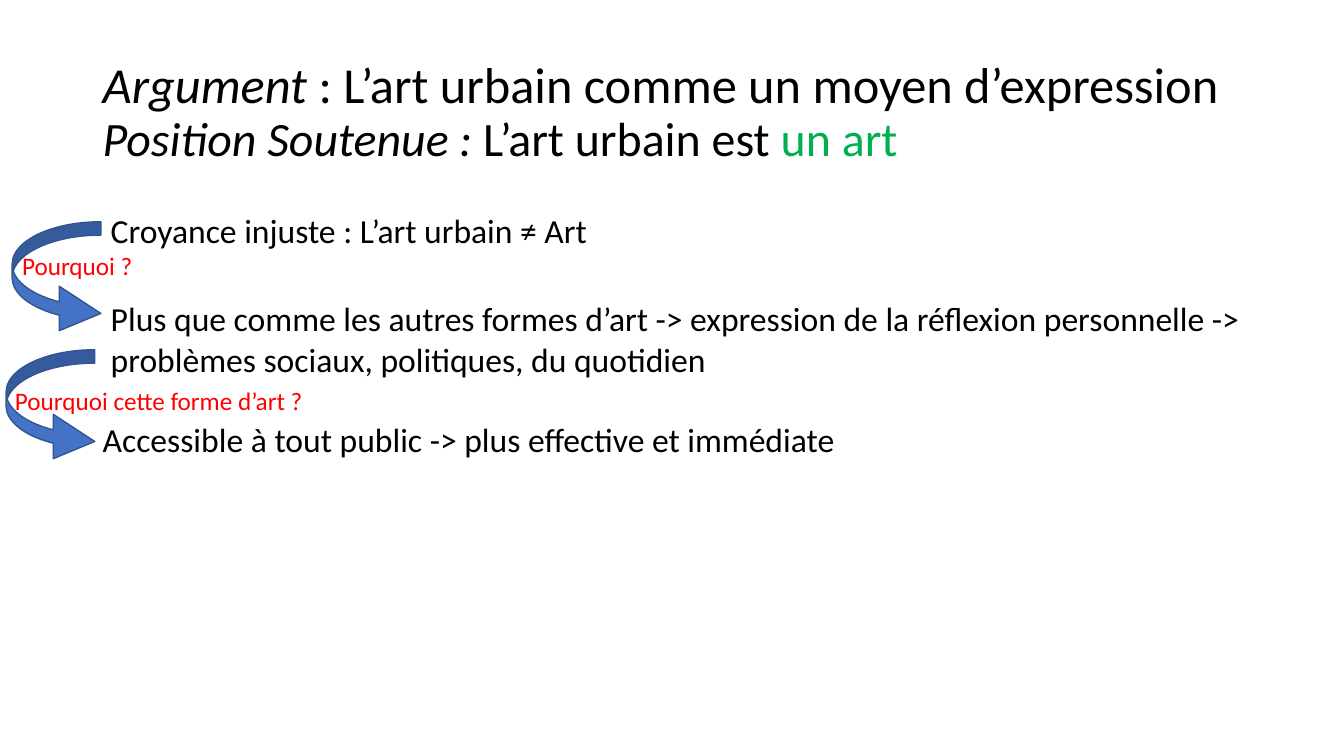
from dataclasses import dataclass

from pptx import Presentation
from pptx.dml.color import RGBColor
from pptx.enum.shapes import MSO_SHAPE
from pptx.enum.text import MSO_ANCHOR, MSO_AUTO_SIZE
from pptx.shapes.shapetree import GroupShapes, SlideShapes
from pptx.slide import Slide
from pptx.text.text import TextFrame
from pptx.util import Inches, Pt

FONT_NAME = "Calibri"
BLACK = RGBColor(0x00, 0x00, 0x00)
RED = RGBColor(0xFF, 0x00, 0x00)
GREEN = RGBColor(0x00, 0xB0, 0x50)
BLUE = RGBColor(0x44, 0x72, 0xC4)
DARK_BLUE = RGBColor(0x32, 0x54, 0x91)

ARROW_WIDTH = 0.88
ARROW_HEIGHT = 1.13
ARROW_ADJUSTMENTS = (0.151, 0.5, 0.468)
TEXT_WIDTH = 11.5


@dataclass(frozen=True)
class TextBlock:
    text: str
    left: float
    top: float
    width: float
    height: float
    size: float = 24
    color: RGBColor = BLACK
    wrap: bool = True
    line_spacing: float | None = None
    space_before: float = 0


@dataclass(frozen=True)
class Question:
    arrow_left: float
    arrow_top: float
    label: TextBlock


@dataclass(frozen=True)
class TitleRun:
    text: str
    size: float
    italic: bool = False
    color: RGBColor = BLACK


TITLE_LINES = (
    (
        TitleRun("Argument", 36, italic=True),
        TitleRun(" : L’art urbain comme un moyen d’expression", 36),
    ),
    (
        TitleRun("Position Soutenue : ", 34.2, italic=True),
        TitleRun("L’art urbain est ", 34.2),
        TitleRun("un art", 34.2, color=GREEN),
    ),
)

CONTENT: tuple[TextBlock | Question, ...] = (
    TextBlock("Croyance injuste : L’art urbain ≠ Art", 1, 2.08, TEXT_WIDTH, 0.77,
              line_spacing=0.9, space_before=10),
    Question(0.12, 2.2, TextBlock("Pourquoi ?", 0.12, 2.43, 1.31, 0.4,
                                  size=18, color=RED, wrap=False)),
    TextBlock("Plus que comme les autres formes d’art -> expression de la réflexion "
              "personnelle -> problèmes sociaux, politiques, du quotidien",
              1, 2.91, TEXT_WIDTH, 0.91),
    Question(0.06, 3.47, TextBlock("Pourquoi cette forme d’art ?", 0.05, 3.77, 3.1, 0.4,
                                   size=18, color=RED, wrap=False)),
    TextBlock("Accessible à tout public -> plus effective et immédiate",
              0.92, 4.11, TEXT_WIDTH, 0.5),
)


def add_text_frame(shapes: SlideShapes | GroupShapes, left: float, top: float,
                   width: float, height: float, wrap: bool = True) -> TextFrame:
    text_box = shapes.add_textbox(Inches(left), Inches(top), Inches(width), Inches(height))
    text_frame = text_box.text_frame
    text_frame.auto_size = MSO_AUTO_SIZE.NONE
    text_frame.word_wrap = wrap
    return text_frame


def add_title(slide: Slide) -> None:
    text_frame = add_text_frame(slide.shapes, 0.92, 0.4, TEXT_WIDTH, 1.45)
    text_frame.vertical_anchor = MSO_ANCHOR.MIDDLE
    paragraph = text_frame.paragraphs[0]
    paragraph.line_spacing = 0.9
    for index, line in enumerate(TITLE_LINES):
        if index:
            paragraph.add_line_break()
        for title_run in line:
            run = paragraph.add_run()
            run.text = title_run.text
            run.font.name = FONT_NAME
            run.font.size = Pt(title_run.size)
            run.font.italic = title_run.italic
            run.font.color.rgb = title_run.color


def add_text_block(shapes: SlideShapes | GroupShapes, block: TextBlock) -> None:
    text_frame = add_text_frame(shapes, block.left, block.top, block.width, block.height,
                                block.wrap)
    paragraph = text_frame.paragraphs[0]
    paragraph.text = block.text
    paragraph.line_spacing = block.line_spacing
    paragraph.space_before = Pt(block.space_before)
    paragraph.font.name = FONT_NAME
    paragraph.font.size = Pt(block.size)
    paragraph.font.color.rgb = block.color


def add_question(slide: Slide, question: Question) -> None:
    group = slide.shapes.add_group_shape()
    arrow = group.shapes.add_shape(
        MSO_SHAPE.CURVED_RIGHT_ARROW, Inches(question.arrow_left), Inches(question.arrow_top),
        Inches(ARROW_WIDTH), Inches(ARROW_HEIGHT))
    for index, adjustment in enumerate(ARROW_ADJUSTMENTS):
        arrow.adjustments[index] = adjustment
    arrow.shadow.inherit = False
    arrow.fill.solid()
    arrow.fill.fore_color.rgb = BLUE
    arrow.line.color.rgb = DARK_BLUE
    arrow.line.width = Pt(1)
    add_text_block(group.shapes, question.label)


def main() -> None:
    presentation = Presentation()
    presentation.slide_width = Inches(13.33)
    presentation.slide_height = Inches(7.5)
    slide = presentation.slides.add_slide(presentation.slide_layouts[6])
    add_title(slide)
    for item in CONTENT:
        if isinstance(item, Question):
            add_question(slide, item)
        else:
            add_text_block(slide.shapes, item)
    presentation.save("out.pptx")


if __name__ == "__main__":
    main()
